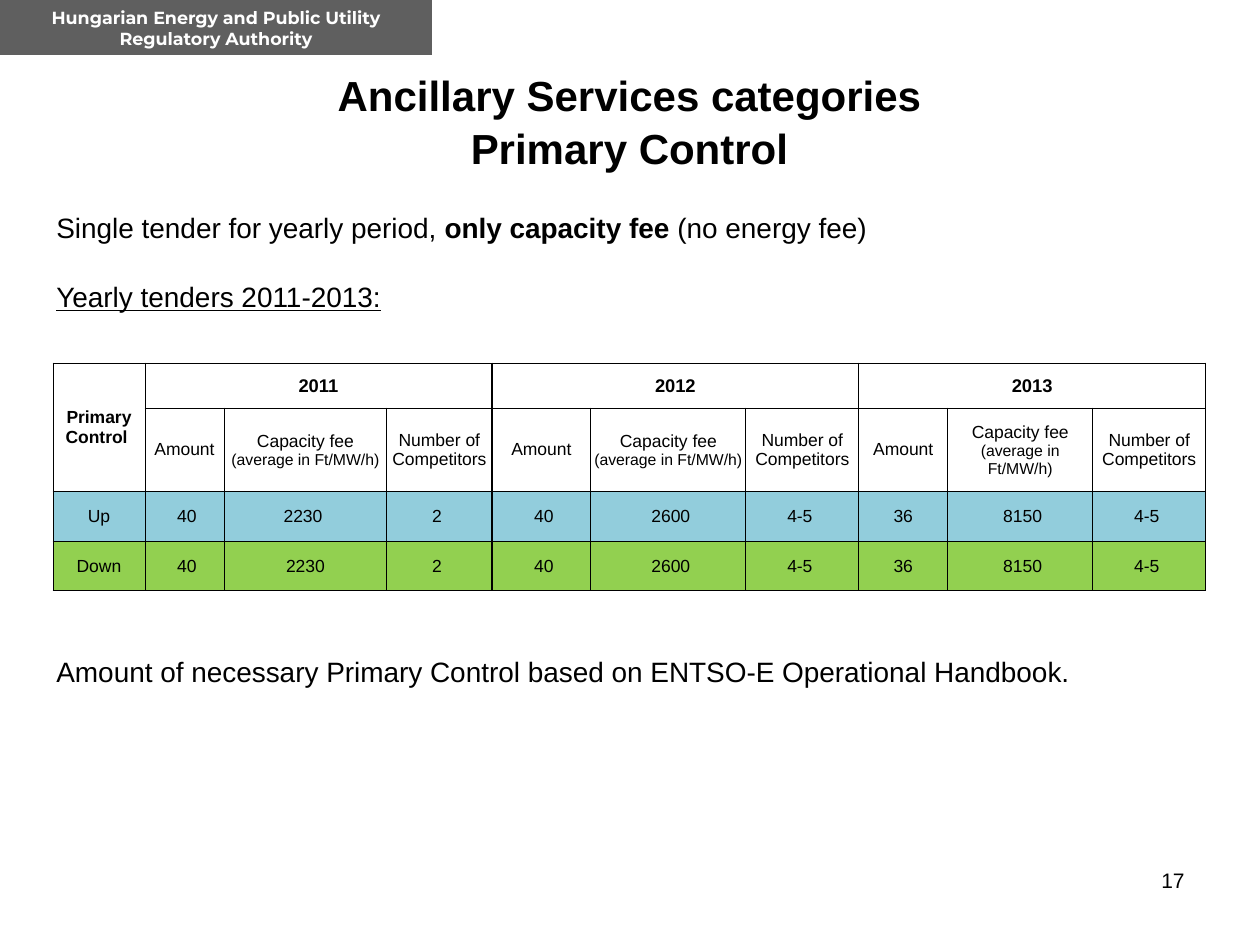
import pptx
import pptx.dml.color
import pptx.enum.shapes
import pptx.enum.text
import pptx.oxml
import pptx.oxml.ns
import pptx.util
from dataclasses import dataclass

PX = 914400 // 126
ALIGN = pptx.enum.text.PP_ALIGN
ANCHOR = pptx.enum.text.MSO_ANCHOR


@dataclass(frozen=True)
class Theme:
    black: str = "000000"
    white: str = "FFFFFF"
    banner: str = "5F5F5F"
    up: str = "92CDDC"
    down: str = "92D050"
    body_font: str = "Arial"
    banner_font: str = "Montserrat"
    title: float = 24
    body: float = 16
    page_number: float = 12
    year: float = 10.5
    small: float = 10
    note: float = 9
    thin: float = 0.5
    thick: float = 1


THEME = Theme()
COLUMNS = [92, 79, 163, 105, 99, 155, 113, 89, 145, 113]
ROWS = [45, 83, 50, 50]
YEARS = ["2011", "2012", "2013"]
YEAR_COLUMNS = 3
MEASURES = [
    [("Amount", {})],
    [("Capacity fee ", {}), ("(average in Ft/MW/h)", {"size": THEME.note})],
    [("Number of Competitors", {})],
]
TENDERS = [
    (THEME.up, ["Up", " 40", "2230 ", "2 ", " 40", " 2600", "4-5 ", "36", " 8150", "4-5 "]),
    (THEME.down, ["Down", " 40", "2230", "2 ", " 40", " 2600", "4-5 ", " 36 ", " 8150", "4-5 "]),
]


def px(length):
    return pptx.util.Emu(length * PX)


def rgb(colour):
    return pptx.dml.color.RGBColor.from_string(colour)


def set_all(target, values):
    for name, value in values.items():
        setattr(target, name, value)


def add_runs(para, runs, size, colour=THEME.black, font=THEME.body_font, bold=False):
    """Add (text, format) runs; each format overrides the paragraph's defaults."""
    for text, changes in runs:
        span = para.add_run()
        span.text = text
        values = {"name": font, "size": size, "bold": bold} | changes
        values["size"] = pptx.util.Pt(values["size"])
        set_all(span.font, values)
        span.font.color.rgb = rgb(colour)


def write(frame, paragraphs, align, **style):
    """Fill a frame with (space before in points, runs) paragraphs."""
    for index, (gap, runs) in enumerate(paragraphs):
        para = frame.add_paragraph() if index else frame.paragraphs[0]
        para.alignment = align
        if gap:
            para.space_before = pptx.util.Pt(gap)
        add_runs(para, runs, **style)


def add_text(slide, bounds, paragraphs, align, frame_format=None, **style):
    box = slide.shapes.add_textbox(*map(px, bounds))
    set_all(box.text_frame, {"word_wrap": True} | (frame_format or {}))
    write(box.text_frame, paragraphs, align, **style)


def add_banner(slide, bounds, text):
    rectangle = pptx.enum.shapes.MSO_SHAPE.RECTANGLE
    banner = slide.shapes.add_shape(rectangle, *map(px, bounds))
    banner.shadow.inherit = False
    banner.fill.solid()
    banner.fill.fore_color.rgb = rgb(THEME.banner)
    banner.line.fill.background()
    write(banner.text_frame, [(0, [(text, {})])], ALIGN.CENTER, size=THEME.small,
          colour=THEME.white, font=THEME.banner_font, bold=True)


def add_borders(cell, widths):
    properties = cell._tc.get_or_add_tcPr()
    for side, width in widths.items():
        properties.append(pptx.oxml.parse_xml(
            f'<a:ln{side} {pptx.oxml.ns.nsdecls("a")} w="{pptx.util.Pt(width)}">'
            f'<a:solidFill><a:srgbClr val="{THEME.black}"/></a:solidFill></a:ln{side}>'))


def format_cell(cell, column, fill):
    """Apply margins, fill and borders, with thicker lines between years."""
    set_all(cell, {"margin_left": px(1), "margin_right": px(1), "margin_top": px(1),
                   "margin_bottom": 0, "vertical_anchor": ANCHOR.MIDDLE})
    last = column + (cell.span_width if cell.is_merge_origin else 1) - 1
    inner = range(YEAR_COLUMNS, len(COLUMNS) - 1, YEAR_COLUMNS)
    add_borders(cell, {
        "L": THEME.thick if column - 1 in inner else THEME.thin,
        "R": THEME.thick if last in inner else THEME.thin,
        "T": THEME.thin,
        "B": THEME.thin,
    })
    if fill:
        cell.fill.solid()
        cell.fill.fore_color.rgb = rgb(fill)
    else:
        cell.fill.background()


def fill_cell(cell, runs, size=THEME.small, bold=False):
    write(cell.text_frame, [(0, runs)], ALIGN.CENTER, size=size, bold=bold)


def add_tender_table(slide, left, top):
    frame = slide.shapes.add_table(len(ROWS), len(COLUMNS), px(left), px(top),
                                   px(sum(COLUMNS)), px(sum(ROWS)))
    table = frame.table
    set_all(table, {"first_row": False, "horz_banding": False})
    for column, width in zip(table.columns, COLUMNS):
        column.width = px(width)
    for row, height in zip(table.rows, ROWS):
        row.height = px(height)

    table.cell(0, 0).merge(table.cell(1, 0))
    fill_cell(table.cell(0, 0), [("Primary Control ", {})], bold=True)
    for index, year in enumerate(YEARS):
        first = 1 + index * YEAR_COLUMNS
        table.cell(0, first).merge(table.cell(0, first + YEAR_COLUMNS - 1))
        fill_cell(table.cell(0, first), [(year, {})], THEME.year, bold=True)
        for offset, runs in enumerate(MEASURES):
            fill_cell(table.cell(1, first + offset), runs)
    for row, (_, values) in enumerate(TENDERS, start=2):
        for column, value in enumerate(values):
            fill_cell(table.cell(row, column), [(value, {})])

    fills = [None, None] + [fill for fill, _ in TENDERS]
    for row, fill in enumerate(fills):
        for column in range(len(COLUMNS)):
            format_cell(table.cell(row, column), column, fill)


def main():
    deck = pptx.Presentation()
    deck.slide_width, deck.slide_height = px(1260), px(945)
    slide = deck.slides.add_slide(deck.slide_layouts[6])

    add_text(slide, (74, 97, 1111, 48),
             [(0, [("Ancillary Services categories", {})]),
              (1.5, [("Primary Control", {})])],
             ALIGN.CENTER, {"vertical_anchor": ANCHOR.MIDDLE},
             size=THEME.title, bold=True)
    add_text(slide, (903, 861, 294, 66), [(0, [("17", {})])], ALIGN.RIGHT,
             size=THEME.page_number)
    add_banner(slide, (0, 0, 432, 55),
               "Hungarian Energy and Public Utility Regulatory Authority")
    add_text(slide, (44, 165, 1191, 780), [
        (0, [("Single tender for yearly period, ", {}),
             ("only capacity fee ", {"bold": True}),
             ("(no energy fee)", {})]),
        (20, [("Yearly tenders 2011-2013:", {"underline": True})]),
        (195, [("Amount of necessary Primary Control based on ENTSO-E "
                "Operational Handbook.", {})]),
    ], ALIGN.LEFT, {"margin_top": px(46)}, size=THEME.body)
    add_tender_table(slide, 53, 363)
    deck.save("out.pptx")


if __name__ == "__main__":
    main()
